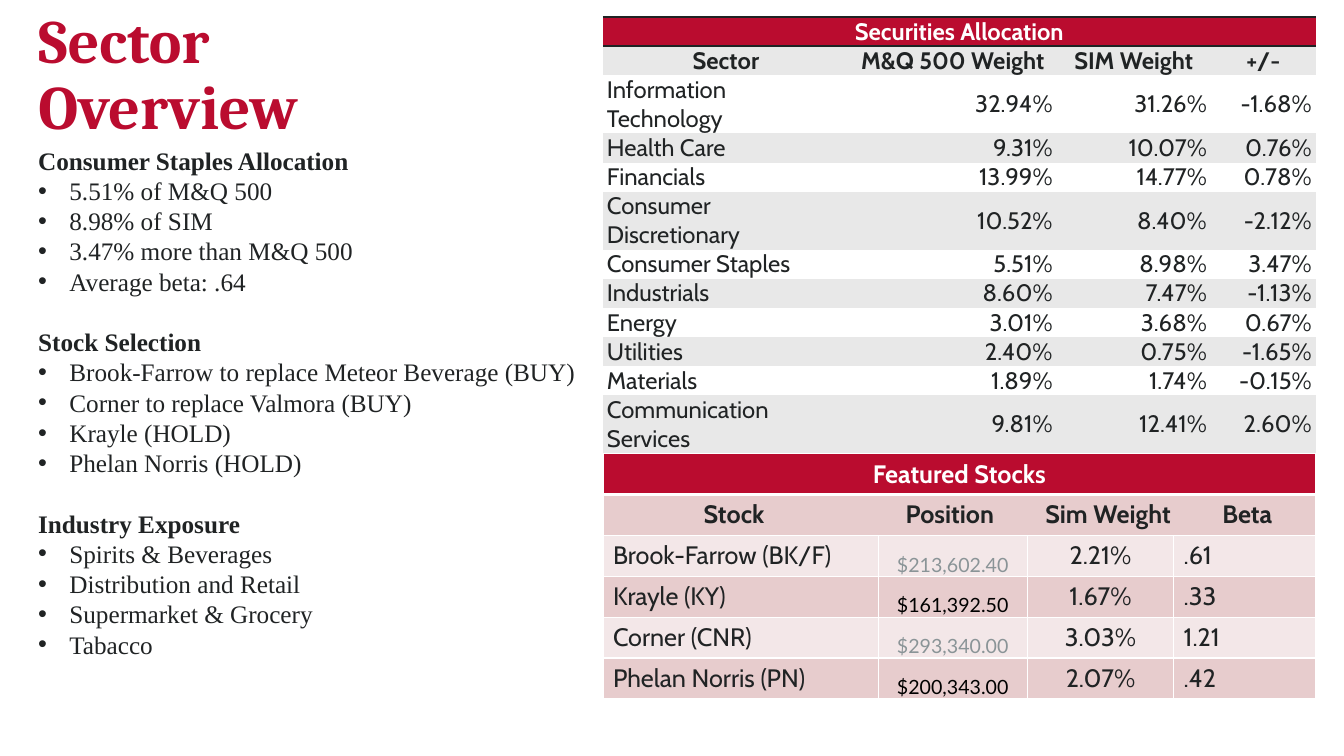
import pptx
import pptx.dml.color
import pptx.enum.text
import pptx.oxml
import pptx.oxml.ns
import pptx.util
from lxml import etree

TITLE = "Sector Overview"
NOTES = [
    ("Consumer Staples Allocation", [
        "5.51% of M&Q 500", "8.98% of SIM",
        "3.47% more than M&Q 500", "Average beta: .64"]),
    ("Stock Selection", [
        "Brook-Farrow to replace Meteor Beverage (BUY)",
        "Corner to replace Valmora (BUY)",
        "Krayle (HOLD)", "Phelan Norris (HOLD)"]),
    ("Industry Exposure", [
        "Spirits & Beverages", "Distribution and Retail",
        "Supermarket & Grocery", "Tabacco"]),
]
SECTORS = [
    ("Securities Allocation",),
    ("Sector", "M&Q 500 Weight", "SIM Weight", "+/-"),
    ("Information Technology", "32.94%", "31.26%", "-1.68%"),
    ("Health Care", "9.31%", "10.07%", "0.76%"),
    ("Financials", "13.99%", "14.77%", "0.78%"),
    ("Consumer Discretionary", "10.52%", "8.40%", "-2.12%"),
    ("Consumer Staples", "5.51%", "8.98%", "3.47%"),
    ("Industrials", "8.60%", "7.47%", "-1.13%"),
    ("Energy", "3.01%", "3.68%", "0.67%"),
    ("Utilities", "2.40%", "0.75%", "-1.65%"),
    ("Materials", "1.89%", "1.74%", "-0.15%"),
    ("Communication Services", "9.81%", "12.41%", "2.60%"),
]
STOCKS = [
    ("Featured Stocks",),
    ("Stock", "Position", "Sim Weight", "Beta"),
    ("Brook-Farrow (BK/F)", "$213,602.40", "2.21%", ".61"),
    ("Krayle (KY)", "$161,392.50", "1.67%", ".33"),
    ("Corner (CNR)", "$293,340.00", "3.03%", "1.21"),
    ("Phelan Norris (PN)", "$200,343.00", "2.07%", ".42"),
]
# Boxes are left, top, width, height in percent of the slide.
BOX = {
    "title": (2.1, 1.3, 32, 18.3),
    "notes": (2.1, 18.53, 46.36, 72),
    "sectors": (44.86, 2.27, 53.04, 57.6),
    "stocks": (44.86, 60, 53.04, 32.4),
}
SECTOR_COLS = (2.44, 2.06, 1.53, 1.04)
STOCK_COLS = (2.73, 1.48, 1.45, 1.41)
STOCK_TABS = (1.2, 3.34, 4.91, 6.29)


class Theme:
    red, ink, white = "BA0C2F", "202324", "FFFFFF"
    gray, rose, blush = "E8E8E8", "E7CCCD", "F3E7E8"
    mute, black = "8A9497", "000000"
    head, body, grid, cash = "Cambria", "Times New Roman", "Cabin", "Lato"
    big, text, small, tiny = 44, 18, 17, 14
    line = 21.6


Inch, Pt = pptx.util.Inches, pptx.util.Pt
Align, Anchor = pptx.enum.text.PP_ALIGN, pptx.enum.text.MSO_ANCHOR
qn = pptx.oxml.ns.qn
NO_STYLE = "{2D5ABB26-0587-4C30-8999-92F81FD0307C}"

deck = pptx.Presentation()
deck.slide_width, deck.slide_height = Inch(13.33), Inch(7.5)
slide = deck.slides.add_slide(deck.slide_layouts[5])


def rgb(code):
    return pptx.dml.color.RGBColor.from_string(code)


def place(name):
    size = (deck.slide_width, deck.slide_height) * 2
    return [int(part * full / 100) for part, full in zip(BOX[name], size)]


def style(par, face, size, color, bold=False, align=Align.LEFT):
    par.alignment = align
    font = par.font
    font.name, font.size, font.bold = face, Pt(size), bold
    font.color.rgb = rgb(color)


def edge(cell, **sides):
    """Draw cell borders; each side is a (colour, points) pair."""
    props = cell._tc.get_or_add_tcPr()
    for side in "LRTB":
        if side in sides:
            color, width = sides[side]
            line = etree.SubElement(props, qn("a:ln" + side), w=str(Pt(width)))
            fill = etree.SubElement(line, qn("a:solidFill"))
            etree.SubElement(fill, qn("a:srgbClr"), val=color)


def paint(cell, color):
    cell.fill.solid()
    cell.fill.fore_color.rgb = rgb(color)


def inset(cell, side, top):
    cell.margin_left = cell.margin_right = Inch(side)
    cell.margin_top = cell.margin_bottom = Inch(top)


def grid(name, count, shares, heights):
    """Add an unstyled table whose columns and rows share out its box."""
    left, top, width, height = place(name)
    table = slide.shapes.add_table(
        count, len(shares), left, top, width, height).table
    table.first_row = table.horz_banding = False
    table._tbl.tblPr.find(qn("a:tableStyleId")).text = NO_STYLE
    for col, share in zip(table.columns, shares):
        col.width = int(width * share / sum(shares))
    for row, share in zip(table.rows, heights):
        row.height = int(height * share / sum(heights))
    table.cell(0, 0).merge(table.cell(0, len(shares) - 1))
    return table


def add_title():
    title = slide.shapes.title
    title.left, title.top, title.width, title.height = place("title")
    frame = title.text_frame
    frame.text, frame.word_wrap = TITLE, True
    frame.auto_size = pptx.enum.text.MSO_AUTO_SIZE.NONE
    frame.vertical_anchor = Anchor.BOTTOM
    par = frame.paragraphs[0]
    par.line_spacing = 0.9
    style(par, Theme.head, Theme.big, Theme.red, True)


def add_notes():
    frame = slide.shapes.add_textbox(*place("notes")).text_frame
    frame.word_wrap = True
    lines = [(text, i == 0) for head, items in NOTES
             for i, text in enumerate([head, *items])]
    for i, (text, head) in enumerate(lines):
        par = frame.add_paragraph() if i else frame.paragraphs[0]
        par.text = text
        par.line_spacing = Pt(Theme.line)
        if head and i:
            par.space_before = Pt(Theme.line)
        if not head:
            props = par._p.get_or_add_pPr()
            props.set("marL", str(Inch(0.31)))
            props.set("indent", str(-Inch(0.31)))
            etree.SubElement(props, qn("a:buFont"), typeface="Arial")
            etree.SubElement(props, qn("a:buChar"), char="•")
        style(par, Theme.body, Theme.text, Theme.ink, head)


def add_sectors():
    wraps = {"Information Technology", "Consumer Discretionary",
             "Communication Services"}
    heights = [2 if row[0] in wraps else 1 for row in SECTORS]
    table = grid("sectors", len(SECTORS), SECTOR_COLS, heights)
    rule = (Theme.ink, 2)
    for r, row in enumerate(SECTORS):
        for c in range(len(SECTOR_COLS)):
            cell = table.cell(r, c)
            inset(cell, 0.04, 0)
            cell.vertical_anchor = Anchor.MIDDLE
            if r == 0:
                edge(cell, T=rule, B=rule)
            paint(cell, Theme.red if r == 0 else
                  Theme.gray if r % 2 else Theme.white)
            if c < len(row):
                cell.text = row[c]
                align = (Align.CENTER if r < 2 else
                         Align.RIGHT if c else Align.LEFT)
                style(cell.text_frame.paragraphs[0], Theme.grid, Theme.small,
                      Theme.ink if r else Theme.white, r < 2, align)


def add_stocks():
    last = len(STOCK_COLS) - 1
    table = grid("stocks", len(STOCKS), STOCK_COLS, [1] * len(STOCKS))
    table.cell(1, 0).merge(table.cell(1, last))
    thin, thick = (Theme.white, 1), (Theme.white, 3)
    for r, row in enumerate(STOCKS):
        if r == 1:
            row = ("\t" + "\t".join(row),)
        for c in range(last + 1):
            cell = table.cell(r, c)
            edge(cell, L=thin, R=thin, T=thick if r == 1 else thin,
                 B=thin if r else thick)
            paint(cell, Theme.red if r == 0 else
                  Theme.rose if r % 2 else Theme.blush)
            if c >= len(row):
                continue
            cell.text = row[c]
            par = cell.text_frame.paragraphs[0]
            if r == 1:
                tabs = etree.SubElement(par._p.get_or_add_pPr(), qn("a:tabLst"))
                for stop in STOCK_TABS:
                    etree.SubElement(tabs, qn("a:tab"),
                                     pos=str(Inch(stop)), algn="ctr")
            if c == 1:
                inset(cell, 0, 0)
                cell.vertical_anchor = Anchor.BOTTOM
                style(par, Theme.cash, Theme.tiny,
                      Theme.black if r % 2 else Theme.mute, align=Align.CENTER)
            else:
                style(par, Theme.grid, Theme.text,
                      Theme.ink if r else Theme.white, r < 2,
                      Align.CENTER if r == 0 or c == 2 else Align.LEFT)


add_title()
add_sectors()
add_stocks()
add_notes()
deck.save("out.pptx")
